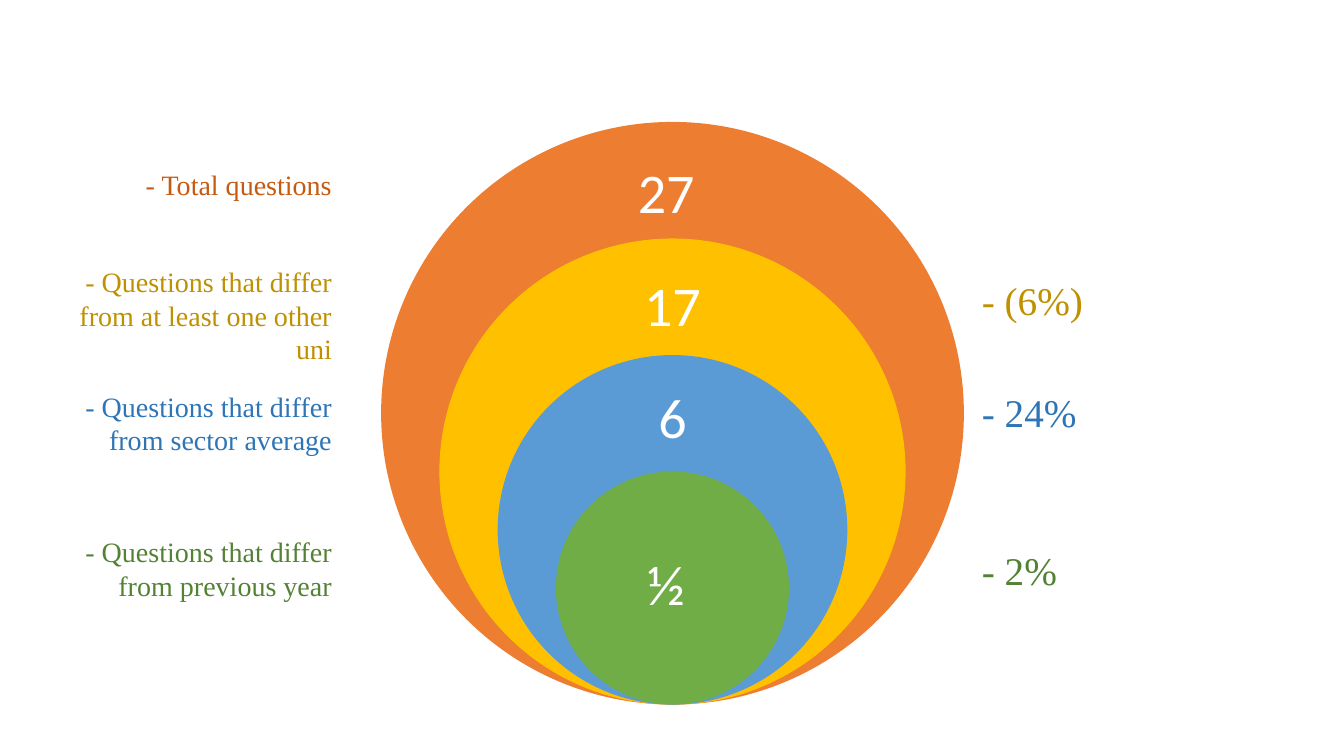
from dataclasses import dataclass
from pptx import Presentation, util as u
from pptx.dml.color import RGBColor
from pptx.enum import shapes, text


@dataclass(frozen=True)
class Theme:
    sans: str = "Calibri"
    serif: str = "Times New Roman"
    white: str = "FFFFFF"
    orange: str = "ED7D31"
    gold: str = "FFC000"
    blue: str = "5B9BD5"
    green: str = "70AD47"
    rust: str = "C55A11"
    ochre: str = "BF9000"
    navy: str = "2E75B6"
    moss: str = "548235"
    count: float = 40
    label: float = 20
    share: float = 28


@dataclass(frozen=True)
class Ring:
    count: str
    fill: str
    top: float
    height: float


@dataclass(frozen=True)
class Line:
    words: str
    color: str
    gap: float = 0  # points above


T = Theme()
CENTER, BASE, OUTER = 6.67, 6.99, 5.78
LEADING = 1.2

RINGS = [
    Ring("27 ", T.orange, 1.5, 0.87),
    Ring("17", T.gold, 2.64, 0.83),
    Ring("6", T.blue, 3.78, 0.78),
    Ring("½ ", T.green, 5.25, 1.16),
]
LABELS = [
    Line("- Total questions", T.rust),
    Line("- Questions that differ from at least one other uni", T.ochre, 45.6),
    Line("- Questions that differ from sector average", T.navy, 16.8),
    Line("- Questions that differ from previous year", T.moss, 55.8),
]
SHARES = [
    Line("- (6%)", T.ochre),
    Line("- 24%", T.navy, 46.8),
    Line("- 2%", T.moss, 79.2),
]


def write(parent, lines: list[Line], box: tuple[float, ...], *, size: float,
          font: str, align, anchor=text.MSO_ANCHOR.TOP,
          leading: float | u.Length = 1.0,
          inset: tuple[float, float] = (0.1, 0.05)) -> None:
    """Add one text box; inset is (sides, top and bottom)."""
    frame = parent.add_textbox(*map(u.Inches, box)).text_frame
    frame.word_wrap = True
    frame.vertical_anchor = anchor
    frame.margin_left = frame.margin_right = u.Inches(inset[0])
    frame.margin_top = frame.margin_bottom = u.Inches(inset[1])
    for i, line in enumerate(lines):
        para = frame.add_paragraph() if i else frame.paragraphs[0]
        para.alignment = align
        para.line_spacing = leading
        para.space_before = u.Pt(line.gap)
        run = para.add_run()
        run.text = line.words
        run.font.name = font
        run.font.size = u.Pt(size)
        run.font.color.rgb = RGBColor.from_string(line.color)


def draw_rings(parent) -> None:
    for i, ring in enumerate(RINGS):
        side = OUTER * (1 - i / 5)
        disc = parent.add_shape(
            shapes.MSO_SHAPE.OVAL, u.Inches(CENTER - side / 2),
            u.Inches(BASE - side), u.Inches(side), u.Inches(side))
        disc.shadow.inherit = False
        disc.fill.solid()
        disc.fill.fore_color.rgb = RGBColor.from_string(ring.fill)
        disc.line.fill.background()
        write(parent, [Line(ring.count, T.white)],
              (CENTER - 0.81, ring.top, 1.62, ring.height),
              size=T.count, font=T.sans, align=text.PP_ALIGN.CENTER,
              anchor=text.MSO_ANCHOR.MIDDLE, leading=0.9, inset=(0.31, 0.31))


def main() -> None:
    deck = Presentation()
    deck.slide_width, deck.slide_height = u.Inches(13.33), u.Inches(7.5)
    slide = deck.slides.add_slide(deck.slide_layouts[6])
    draw_rings(slide.shapes.add_group_shape().shapes)
    write(slide.shapes, LABELS, (0.51, 1.61, 2.88, 4.45), size=T.label,
          font=T.serif, align=text.PP_ALIGN.RIGHT,
          leading=u.Pt(T.label * LEADING))
    write(slide.shapes, SHARES, (9.64, 2.69, 2.88, 3.38), size=T.share,
          font=T.serif, align=text.PP_ALIGN.LEFT,
          leading=u.Pt(T.share * LEADING))
    deck.save("out.pptx")


if __name__ == "__main__":
    main()
